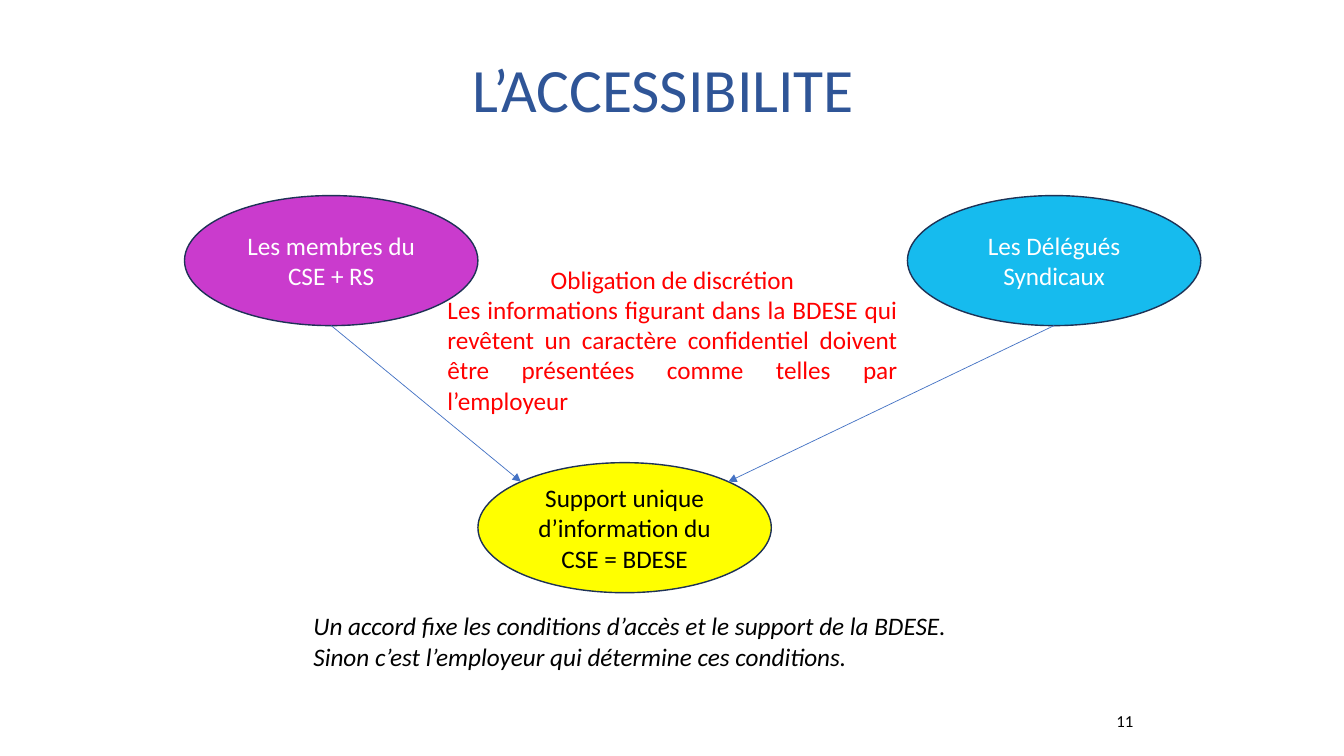
"""Builds the slide on who can access the BDESE."""
from pptx import Presentation
from pptx.dml.color import RGBColor
from pptx.enum.shapes import MSO_CONNECTOR, MSO_SHAPE
from pptx.enum.text import MSO_ANCHOR, PP_ALIGN
from pptx.oxml.ns import qn
from pptx.util import Inches, Pt
from lxml import etree

OVAL = MSO_SHAPE.OVAL
STRAIGHT = MSO_CONNECTOR.STRAIGHT
TOP, MIDDLE = MSO_ANCHOR.TOP, MSO_ANCHOR.MIDDLE
LEFT, CENTER, RIGHT, JUSTIFY = (
    PP_ALIGN.LEFT, PP_ALIGN.CENTER, PP_ALIGN.RIGHT, PP_ALIGN.JUSTIFY)

WHITE = RGBColor(0xFF, 0xFF, 0xFF)
BLACK = RGBColor(0x00, 0x00, 0x00)
RED = RGBColor(0xFF, 0x00, 0x00)
YELLOW = RGBColor(0xFF, 0xFF, 0x00)
PURPLE = RGBColor(0xCA, 0x3B, 0xCD)
CYAN = RGBColor(0x16, 0xBB, 0xEE)
NAVY = RGBColor(0x1E, 0x32, 0x56)
TITLE_BLUE = RGBColor(0x2F, 0x55, 0x97)
ARROW_BLUE = RGBColor(0x44, 0x72, 0xC4)

OVAL_WIDTH, OVAL_HEIGHT = 2.91, 1.29
DIAGONAL = 0.5 ** 0.5


class AccessSlide:
    """Holds the text style and the slide, and adds its elements."""

    font = "Calibri"

    def __init__(self, slide):
        """Keep the slide that receives the elements."""
        self.slide = slide

    def fill_text(self, frame, paragraphs, color, size, italic=False):
        """Fill a text frame with (text, alignment) paragraphs."""
        frame.word_wrap = True
        for index, (text, alignment) in enumerate(paragraphs):
            paragraph = frame.add_paragraph() if index else frame.paragraphs[0]
            paragraph.alignment = alignment
            run = paragraph.add_run()
            run.text = text
            run.font.name = self.font
            run.font.size = Pt(size)
            run.font.italic = italic
            run.font.color.rgb = color

    def text(self, box, paragraphs, color, size=18, italic=False, anchor=TOP):
        """Add a text box at (left, top, width, height)."""
        frame = self.slide.shapes.add_textbox(*map(Inches, box)).text_frame
        frame.vertical_anchor = anchor
        self.fill_text(frame, paragraphs, color, size, italic)

    def oval(self, left, top, text, fill, color=WHITE):
        """Add an outlined ellipse with centred text."""
        oval = self.slide.shapes.add_shape(
            OVAL, Inches(left), Inches(top), Inches(OVAL_WIDTH), Inches(OVAL_HEIGHT))
        oval.shadow.inherit = False
        oval.fill.solid()
        oval.fill.fore_color.rgb = fill
        oval.line.color.rgb = NAVY
        oval.line.width = Pt(1)
        oval.text_frame.vertical_anchor = MIDDLE
        self.fill_text(oval.text_frame, [(text, CENTER)], color, 18)

    def arrow(self, start, end):
        """Add a thin arrow between two points."""
        arrow = self.slide.shapes.add_connector(
            STRAIGHT, *map(Inches, (*start, *end)))
        arrow.line.color.rgb = ARROW_BLUE
        arrow.line.width = Pt(0.5)
        properties = arrow._element.spPr
        etree.SubElement(properties.find(qn("a:ln")), qn("a:tailEnd"), type="triangle")
        etree.SubElement(properties, qn("a:effectLst"))


def main():
    """Build and save the slide."""
    deck = Presentation()
    deck.slide_width, deck.slide_height = Inches(13.33), Inches(7.5)
    page = AccessSlide(deck.slides.add_slide(deck.slide_layouts[6]))

    page.text((10.71, 6.95, 0.63, 0.4), [("11", RIGHT)], BLACK, 12, anchor=MIDDLE)

    readers_top, support_left, support_top = 1.94, 4.74, 4.59
    readers = [(1.83, "Les membres du CSE + RS", PURPLE, -1),
               (9, "Les Délégués Syndicaux", CYAN, 1)]
    for left, label, fill, _ in readers:
        page.oval(left, readers_top, label, fill)
    page.oval(support_left, support_top,
              "Support unique d’information du CSE = BDESE", YELLOW, BLACK)
    for left, _, _, side in readers:
        page.arrow(
            (left + OVAL_WIDTH / 2, readers_top + OVAL_HEIGHT),
            (support_left + OVAL_WIDTH / 2 * (1 + side * DIAGONAL),
             support_top + OVAL_HEIGHT / 2 * (1 - DIAGONAL)))

    page.text((3.99, 0.46, 5.18, 0.84), [("L’ACCESSIBILITE", CENTER)], TITLE_BLUE, 44)
    page.text((3.01, 6.01, 7.92, 0.71), [
        ("Un accord fixe les conditions d’accès et le support de la BDESE.", LEFT),
        ("Sinon c’est l’employeur qui détermine ces conditions.", LEFT),
    ], BLACK, italic=True)
    page.text((4.34, 2.57, 4.66, 1.62), [
        ("Obligation de discrétion", CENTER),
        ("Les informations figurant dans la BDESE qui revêtent un caractère "
         "confidentiel doivent être présentées comme telles par l’employeur", JUSTIFY),
    ], RED)

    deck.save("out.pptx")


if __name__ == "__main__":
    main()
